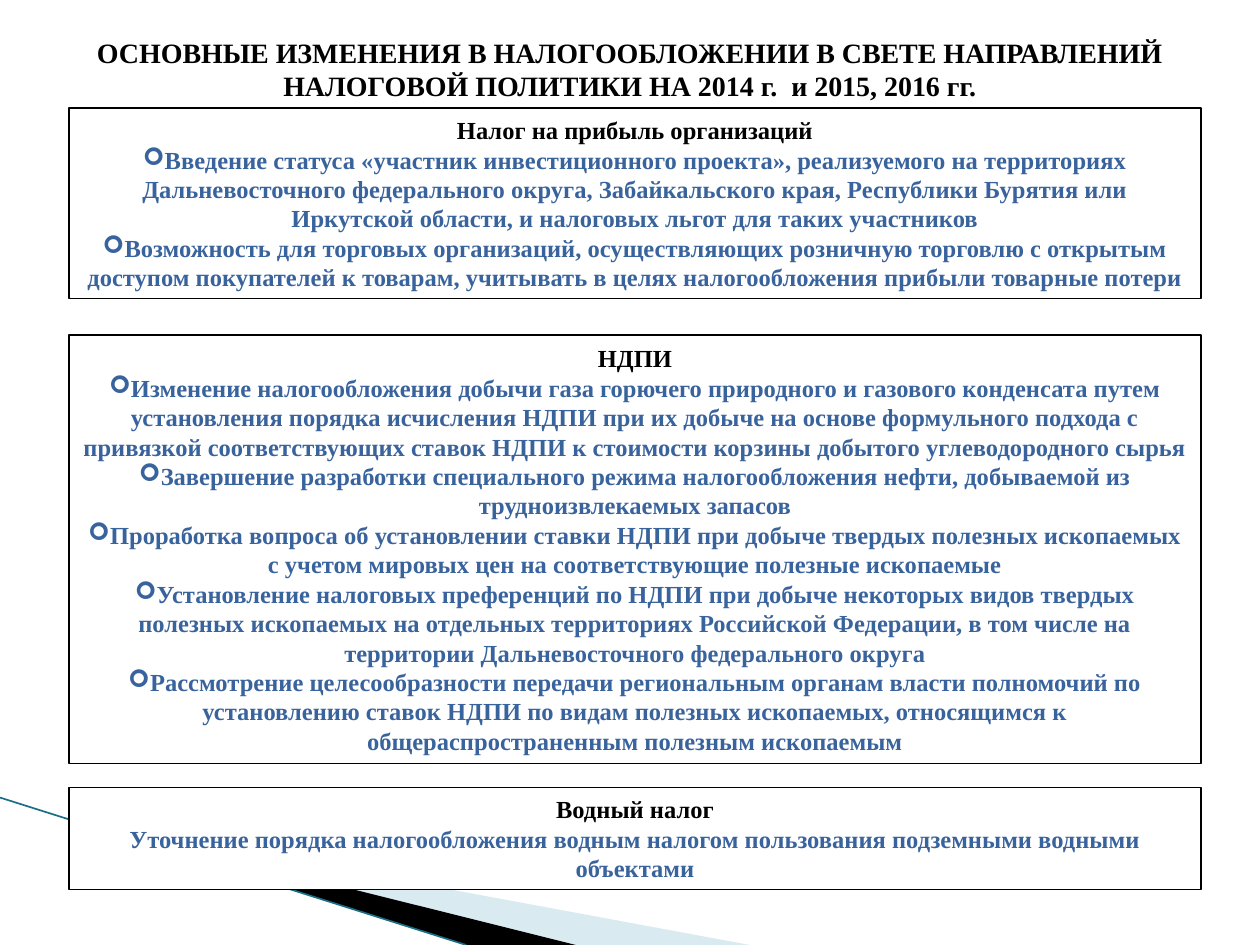
"""Builds a slide on tax changes with three bordered text panels."""
from lxml import etree
from pptx import Presentation
from pptx.dml.color import RGBColor
from pptx.enum.shapes import MSO_CONNECTOR, MSO_SHAPE
from pptx.enum.text import MSO_ANCHOR, PP_ALIGN
from pptx.oxml.ns import qn
from pptx.util import Inches, Pt

STRAIGHT = MSO_CONNECTOR.STRAIGHT
RECTANGLE = MSO_SHAPE.RECTANGLE
TOP = MSO_ANCHOR.TOP
MIDDLE = MSO_ANCHOR.MIDDLE
CENTER = PP_ALIGN.CENTER

BLACK = RGBColor(0x00, 0x00, 0x00)
WHITE = RGBColor(0xFF, 0xFF, 0xFF)
BLUE = RGBColor(0x39, 0x63, 0x9D)
PALE_BLUE = RGBColor(0xA0, 0xCB, 0xDC)
TEAL = RGBColor(0x1B, 0x6E, 0x87)

FONT = "Times New Roman"
PANEL_LEFT, PANEL_WIDTH = 0.55, 8.98

TITLE = (
    "ОСНОВНЫЕ ИЗМЕНЕНИЯ В НАЛОГООБЛОЖЕНИИ В СВЕТЕ НАПРАВЛЕНИЙ "
    "НАЛОГОВОЙ ПОЛИТИКИ НА 2014 г.  и 2015, 2016 гг."
)

PANELS = [
    {
        "top": 0.86, "height": 1.51, "fill": None, "bullet": "➢",
        "heading": "Налог на прибыль организаций",
        "items": [
            "Введение статуса «участник инвестиционного проекта», реализуемого на территориях "
            "Дальневосточного федерального округа, Забайкальского края, Республики Бурятия или "
            "Иркутской области, и налоговых льгот для таких участников",
            "Возможность для торговых организаций, осуществляющих розничную торговлю с открытым "
            "доступом покупателей к товарам, учитывать в целях налогообложения прибыли товарные потери",
        ],
    },
    {
        "top": 2.66, "height": 3.4, "fill": None, "bullet": "➢",
        "heading": "НДПИ",
        "items": [
            "Изменение налогообложения добычи газа горючего природного и газового конденсата путем "
            "установления порядка исчисления НДПИ при их добыче на основе формульного подхода с "
            "привязкой соответствующих ставок НДПИ к стоимости корзины добытого углеводородного сырья",
            "Завершение разработки специального режима налогообложения нефти, добываемой из "
            "трудноизвлекаемых запасов",
            "Проработка вопроса об установлении ставки НДПИ при добыче твердых полезных ископаемых "
            "с учетом мировых цен на соответствующие полезные ископаемые",
            "Установление налоговых преференций по НДПИ при добыче некоторых видов твердых "
            "полезных ископаемых на отдельных территориях Российской Федерации, в том числе на "
            "территории Дальневосточного федерального округа",
            "Рассмотрение целесообразности передачи региональным органам власти полномочий по "
            "установлению ставок НДПИ по видам полезных ископаемых, относящимся к "
            "общераспространенным полезным ископаемым",
        ],
    },
    {
        "top": 6.25, "height": 0.81, "fill": WHITE, "bullet": None,
        "heading": "Водный налог",
        "items": [
            "Уточнение порядка налогообложения водным налогом пользования подземными водными объектами",
        ],
    },
]

WEDGES = [
    {"points": [(0.55, 6.5), (5.95, 7.5), (4.56, 7.5)], "color": PALE_BLUE, "alpha": 40},
    {"points": [(0.53, 6.49), (4.57, 7.5), (3.7, 7.5)], "color": BLACK, "alpha": 100},
]
EDGE_LINE = (0, 6.33, 3.7, 7.5)


def add_wedge(slide, points, color, alpha):
    corners = [(Inches(x), Inches(y)) for x, y in points]
    builder = slide.shapes.build_freeform(*corners[0])
    builder.add_line_segments(corners[1:], close=True)
    shape = builder.convert_to_shape()
    shape.shadow.inherit = False
    shape.fill.solid()
    shape.fill.fore_color.rgb = color
    shape.line.fill.background()
    if alpha < 100:
        color_element = shape._element.spPr.find(qn("a:solidFill"))[0]
        etree.SubElement(color_element, qn("a:alpha"), val=str(alpha * 1000))


def add_edge_line(slide):
    connector = slide.shapes.add_connector(STRAIGHT, *map(Inches, EDGE_LINE))
    connector.line.color.rgb = TEAL
    connector.line.width = Pt(0.95)
    etree.SubElement(connector._element.spPr, qn("a:effectLst"))


def write_paragraphs(shape, paragraphs, size, anchor):
    frame = shape.text_frame
    frame.word_wrap = True
    frame.vertical_anchor = anchor
    for index, (text, color, bullet) in enumerate(paragraphs):
        paragraph = frame.add_paragraph() if index else frame.paragraphs[0]
        paragraph.alignment = CENTER
        if bullet:
            properties = paragraph._p.get_or_add_pPr()
            properties.set("marL", "0")
            properties.set("indent", "0")
            etree.SubElement(properties, qn("a:buFont"), typeface="Wingdings")
            etree.SubElement(properties, qn("a:buChar"), char=bullet)
        run = paragraph.add_run()
        run.text = text
        for name, value in {"name": FONT, "size": Pt(size), "bold": True}.items():
            setattr(run.font, name, value)
        run.font.color.rgb = color


def add_panel(slide, panel):
    bounds = (PANEL_LEFT, panel["top"], PANEL_WIDTH, panel["height"])
    shape = slide.shapes.add_shape(RECTANGLE, *map(Inches, bounds))
    shape.shadow.inherit = False
    if panel["fill"] is None:
        shape.fill.background()
    else:
        shape.fill.solid()
        shape.fill.fore_color.rgb = panel["fill"]
    shape.line.color.rgb = BLACK
    shape.line.width = Pt(1)
    items = [(item, BLUE, panel["bullet"]) for item in panel["items"]]
    write_paragraphs(shape, [(panel["heading"], BLACK, None)] + items, 14, MIDDLE)


def main():
    presentation = Presentation()
    presentation.slide_width, presentation.slide_height = Inches(10), Inches(7.5)
    slide = presentation.slides.add_slide(presentation.slide_layouts[6])
    for wedge in WEDGES:
        add_wedge(slide, **wedge)
    add_edge_line(slide)
    title = slide.shapes.add_textbox(*map(Inches, (0.47, 0.23, 9.06, 0.64)))
    write_paragraphs(title, [(TITLE, BLACK, None)], 16, TOP)
    for panel in PANELS:
        add_panel(slide, panel)
    presentation.save("out.pptx")


if __name__ == "__main__":
    main()
